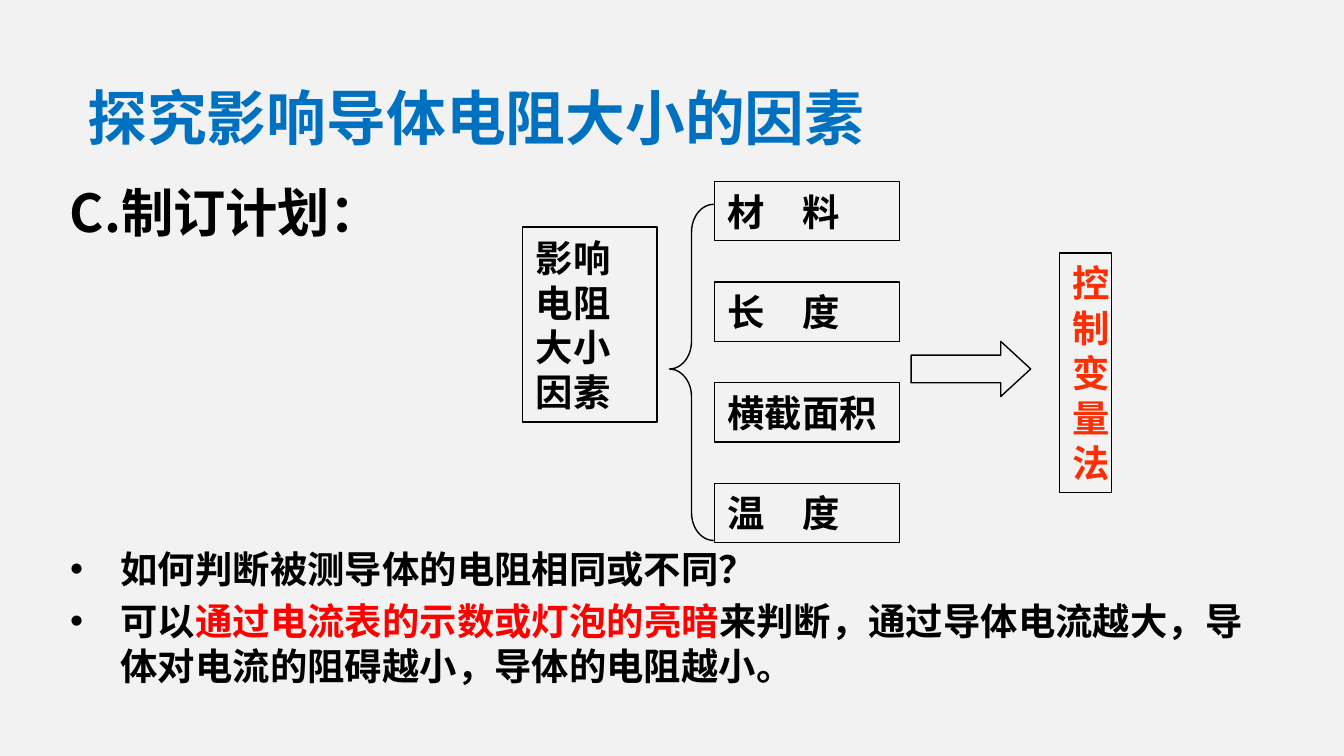
from lxml.etree import SubElement
from pptx import Presentation
from pptx.dml.color import RGBColor
from pptx.enum.shapes import MSO_SHAPE
from pptx.enum.text import MSO_ANCHOR, MSO_AUTO_SIZE, PP_ALIGN
from pptx.oxml.ns import qn
from pptx.util import Cm, Pt

FONT = "Noto Sans CJK SC"


def rgb(value):
    return RGBColor.from_string(value)


def style(p, size, color):
    p.alignment = PP_ALIGN.LEFT
    p.font.size = Pt(size)
    p.font.bold = True
    p.font.color.rgb = rgb(color)
    p.font.name = FONT
    SubElement(p.font._element, qn("a:ea"), typeface=FONT)


prs = Presentation()
prs.slide_width, prs.slide_height = Cm(25.4), Cm(14.28)
slide = prs.slides.add_slide(prs.slide_layouts[1])
slide.background.fill.solid()
slide.background.fill.fore_color.rgb = rgb("F2F2F2")

title = slide.shapes.title
title.left, title.top, title.width, title.height = Cm(1.4), Cm(1.4), Cm(18.8), Cm(1.6)
tf = title.text_frame
tf.auto_size = MSO_AUTO_SIZE.NONE
tf.text = "探究影响导体电阻大小的因素"
style(tf.paragraphs[0], 32, "0070C0")

sp = slide.shapes.add_textbox(Cm(1.07), Cm(3.28), Cm(7.06), Cm(1.45))
tf = sp.text_frame
tf.word_wrap = True
tf.text = "C.制订计划："
style(tf.paragraphs[0], 28, "000000")

RECT = MSO_SHAPE.RECTANGLE
diagram = [
    (RECT, 9.88, 4.29, 2.54, 3.68, "影响电阻大小因素", "000000", []),
    (MSO_SHAPE.LEFT_BRACE, 12.65, 3.86, 0.84, 6.35, "", "", [0.625, 0.49]),
    (MSO_SHAPE.RIGHT_ARROW, 17.22, 6.45, 2.26, 1.04, "", "", [0.5, 0.543]),
    (RECT, 20.02, 4.78, 0.99, 4.52, "控制变量法", "FA2F06", []),
]
for i, factor in enumerate(["材　料", "长　度", "横截面积", "温　度"]):
    diagram.append((RECT, 13.5, 3.43 + 1.9 * i, 3.5, 1.12, factor, "000000", []))

for kind, x, y, w, h, text, color, adjustments in diagram:
    sp = slide.shapes.add_shape(kind, Cm(x), Cm(y), Cm(w), Cm(h))
    sp.shadow.inherit = False
    sp.fill.background()
    sp.line.color.rgb = rgb("000000")
    sp.line.width = Pt(0.75)
    for i, value in enumerate(adjustments):
        sp.adjustments[i] = value
    if text:
        tf = sp.text_frame
        tf.word_wrap = True
        tf.text = text
        style(tf.paragraphs[0], 20, color)

body = slide.placeholders[1]
body.left, body.top, body.width, body.height = Cm(1.07), Cm(10.19), Cm(23.06), Cm(3.02)
tf = body.text_frame
tf.auto_size = MSO_AUTO_SIZE.NONE
tf.vertical_anchor = MSO_ANCHOR.TOP
tf.text = "如何判断被测导体的电阻相同或不同？"
style(tf.paragraphs[0], 20, "000000")
p = tf.add_paragraph()
style(p, 20, "000000")
p.add_run().text = "可以"
r = p.add_run()
r.text = "通过电流表的示数或灯泡的亮暗"
r.font.color.rgb = rgb("FF0000")
p.add_run().text = "来判断，通过导体电流越大，导体对电流的阻碍越小，导体的电阻越小。"

prs.save("out.pptx")
